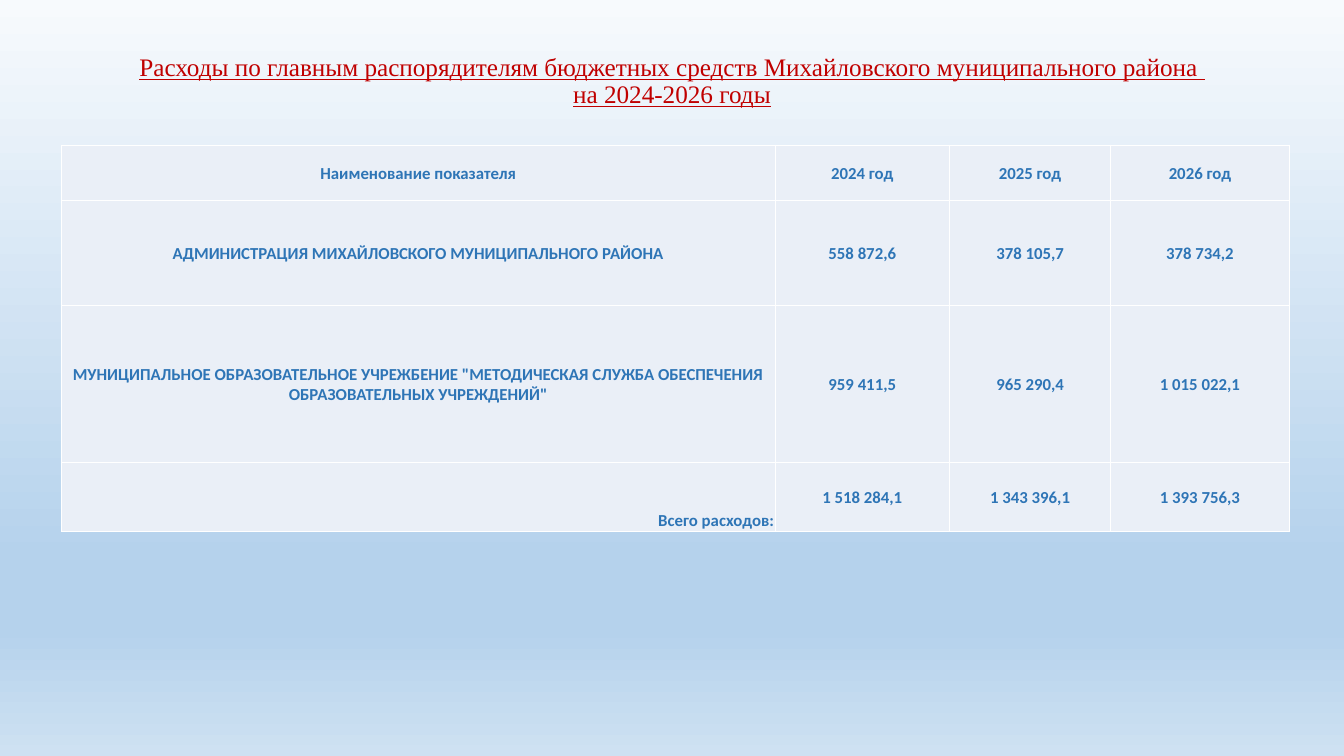
from dataclasses import dataclass

from lxml.etree import SubElement
from pptx import Presentation
from pptx.dml.color import RGBColor
from pptx.enum.text import MSO_ANCHOR as Anchor, MSO_AUTO_SIZE as AutoSize, PP_ALIGN as Align
from pptx.oxml.ns import qn
from pptx.slide import Slide
from pptx.table import _Cell as Cell
from pptx.util import Pt


@dataclass(frozen=True)
class Theme:
    title_font: str = "Times New Roman"
    table_font: str = "Calibri"
    title_size: float = 18
    table_size: float = 12
    title_color: str = "C00000"
    table_color: str = "2E75B6"
    cell_fill: str = "EAEFF7"
    border_color: str = "FFFFFF"
    border_width: float = 1
    background: tuple = ((0, "F7FAFD"), (74, "B5D2EC"), (83, "B5D2EC"), (100, "CEE1F2"))


@dataclass(frozen=True)
class BudgetRow:
    name: str
    amounts: tuple[str, str, str]
    height: float
    name_align: Align = Align.CENTER
    name_anchor: Anchor = Anchor.MIDDLE


THEME = Theme()
TITLE = (
    "Расходы по главным распорядителям бюджетных средств "
    "Михайловского муниципального района \vна 2024-2026 годы"
)
COLUMN_WIDTHS = (509.76, 124.56, 115.2, 127.44)
BUDGET_ROWS = (
    BudgetRow("Наименование показателя", ("2024 год", "2025 год", "2026 год"), 39.6),
    BudgetRow(
        "АДМИНИСТРАЦИЯ МИХАЙЛОВСКОГО МУНИЦИПАЛЬНОГО РАЙОНА",
        ("558 872,6", "378 105,7", "378 734,2"),
        74.88,
    ),
    BudgetRow(
        'МУНИЦИПАЛЬНОЕ ОБРАЗОВАТЕЛЬНОЕ УЧРЕЖБЕНИЕ "МЕТОДИЧЕСКАЯ СЛУЖБА '
        'ОБЕСПЕЧЕНИЯ ОБРАЗОВАТЕЛЬНЫХ УЧРЕЖДЕНИЙ"',
        ("959 411,5", "965 290,4", "1 015 022,1"),
        112.32,
    ),
    BudgetRow(
        "Всего расходов:",
        ("1 518 284,1", "1 343 396,1", "1 393 756,3"),
        48.96,
        Align.RIGHT,
        Anchor.BOTTOM,
    ),
)


def apply_format(target: object, values: dict) -> None:
    for name, value in values.items():
        setattr(target, name, value)


def paint_background(slide: Slide) -> None:
    fill = slide.background.fill
    fill.gradient()
    fill.gradient_angle = 270
    stops = next(slide.element.iter(qn("a:gsLst")))
    for stop in list(stops):
        stops.remove(stop)
    for position, color in THEME.background:
        stop = SubElement(stops, qn("a:gs"), pos=str(position * 1000))
        SubElement(stop, qn("a:srgbClr"), val=color)


def write_title(slide: Slide) -> None:
    title = slide.shapes.title
    apply_format(title, {"left": Pt(66), "top": Pt(0), "width": Pt(828), "height": Pt(98.64)})
    frame = title.text_frame
    frame.text = TITLE
    apply_format(frame, {
        "word_wrap": True,
        "auto_size": AutoSize.NONE,
        "vertical_anchor": Anchor.MIDDLE,
        "margin_top": Pt(22.2),
        "margin_bottom": Pt(3.6),
    })
    paragraph = frame.paragraphs[0]
    apply_format(paragraph, {"alignment": Align.CENTER, "line_spacing": 0.9})
    for run in paragraph.runs:
        apply_format(run.font, {
            "name": THEME.title_font, "size": Pt(THEME.title_size), "underline": True,
        })
        run.font.color.rgb = RGBColor.from_string(THEME.title_color)


def add_borders(cell: Cell) -> None:
    properties = cell._tc.get_or_add_tcPr()
    for side in ("lnL", "lnR", "lnT", "lnB"):
        line = SubElement(properties, qn(f"a:{side}"), w=str(Pt(THEME.border_width)))
        SubElement(SubElement(line, qn("a:solidFill")), qn("a:srgbClr"), val=THEME.border_color)


def write_cell(cell: Cell, text: str, align: Align, anchor: Anchor) -> None:
    cell.text = text
    apply_format(cell, {
        "vertical_anchor": anchor,
        "margin_left": Pt(0.72),
        "margin_right": Pt(0.72),
        "margin_top": Pt(0.72),
        "margin_bottom": Pt(0),
    })
    paragraph = cell.text_frame.paragraphs[0]
    paragraph.alignment = align
    font = paragraph.runs[0].font
    apply_format(font, {"name": THEME.table_font, "size": Pt(THEME.table_size), "bold": True})
    font.color.rgb = RGBColor.from_string(THEME.table_color)
    add_borders(cell)
    cell.fill.solid()
    cell.fill.fore_color.rgb = RGBColor.from_string(THEME.cell_fill)


def add_budget_table(slide: Slide) -> None:
    table = slide.shapes.add_table(
        len(BUDGET_ROWS), len(COLUMN_WIDTHS),
        Pt(43.92), Pt(103.68),
        Pt(sum(COLUMN_WIDTHS)), Pt(sum(row.height for row in BUDGET_ROWS)),
    ).table
    apply_format(table, {"first_row": False, "horz_banding": False})
    for column, width in zip(table.columns, COLUMN_WIDTHS):
        column.width = Pt(width)
    for table_row, budget_row in zip(table.rows, BUDGET_ROWS):
        table_row.height = Pt(budget_row.height)
        name_cell, *amount_cells = table_row.cells
        write_cell(name_cell, budget_row.name, budget_row.name_align, budget_row.name_anchor)
        for cell, amount in zip(amount_cells, budget_row.amounts):
            write_cell(cell, amount, Align.CENTER, Anchor.MIDDLE)


def main() -> None:
    presentation = Presentation()
    apply_format(presentation, {"slide_width": Pt(960), "slide_height": Pt(540)})
    slide = presentation.slides.add_slide(presentation.slide_layouts.get_by_name("Title Only"))
    paint_background(slide)
    write_title(slide)
    add_budget_table(slide)
    presentation.save("out.pptx")


if __name__ == "__main__":
    main()
